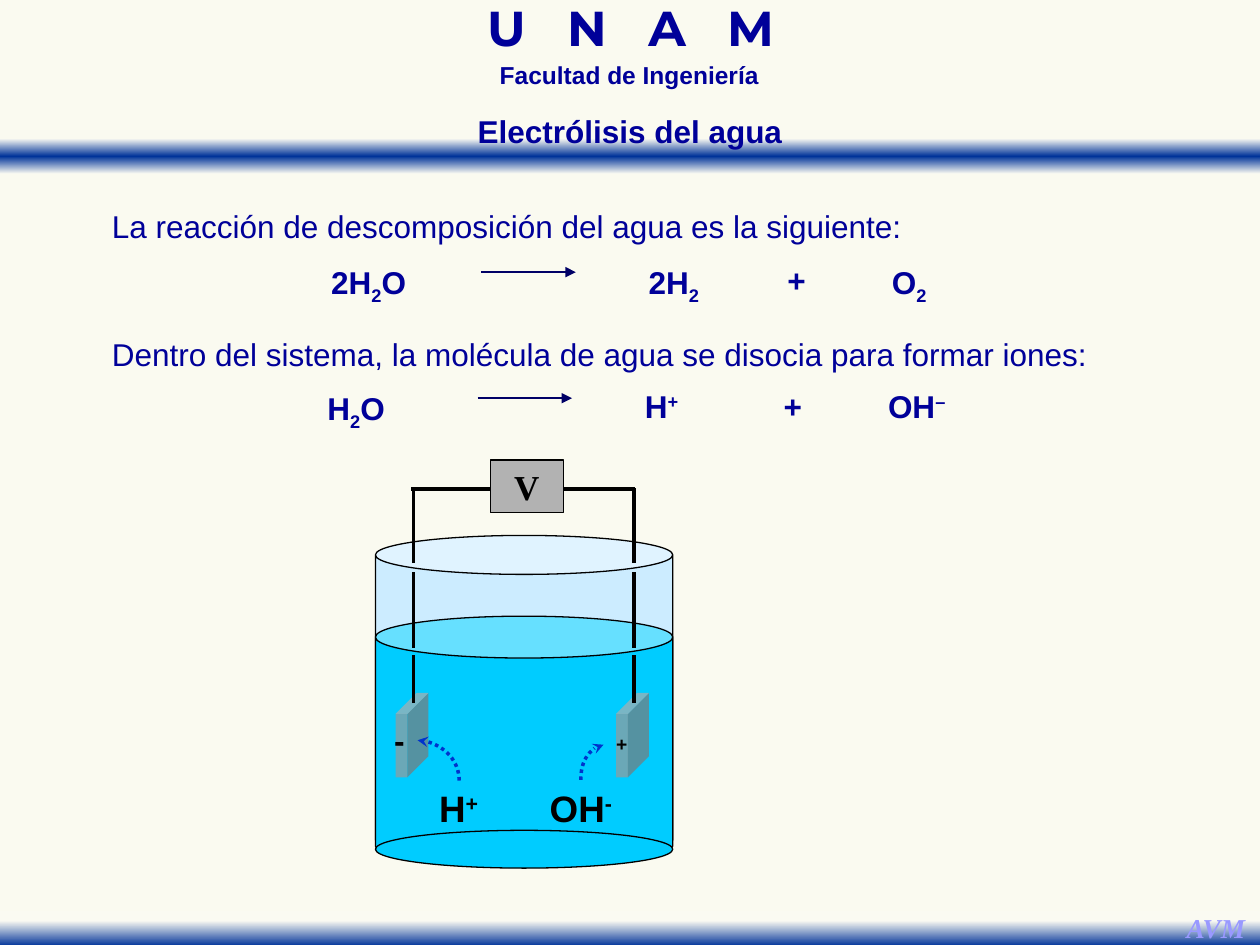
from copy import deepcopy
from dataclasses import dataclass

from lxml.etree import SubElement
from pptx import Presentation
from pptx.dml.color import RGBColor
from pptx.enum.dml import MSO_LINE
from pptx.enum.shapes import MSO_CONNECTOR, MSO_SHAPE
from pptx.enum.text import MSO_ANCHOR, MSO_AUTO_SIZE, PP_ALIGN
from pptx.oxml.ns import qn
from pptx.util import Inches, Pt


@dataclass(frozen=True)
class Theme:
    paper: RGBColor = RGBColor.from_string("FAFAF0")
    fade: RGBColor = RGBColor.from_string("FAFAF2")
    band: RGBColor = RGBColor.from_string("003399")
    navy: RGBColor = RGBColor.from_string("000099")
    reaction: RGBColor = RGBColor.from_string("000066")
    ion_path: RGBColor = RGBColor.from_string("0033CC")
    signature: RGBColor = RGBColor.from_string("9999FF")
    glass: RGBColor = RGBColor.from_string("CCECFF")
    water: RGBColor = RGBColor.from_string("00CCFF")
    metal: RGBColor = RGBColor.from_string("B2B2B2")
    plate: RGBColor = RGBColor.from_string("999999")
    black: RGBColor = RGBColor.from_string("000000")
    sans: str = "Arial"
    display: str = "Montserrat"
    serif: str = "Times New Roman"
    logo_size: float = 28
    faculty_size: float = 14
    signature_size: float = 15.6
    body_size: float = 18
    ion_size: float = 21
    source_size: float = 20
    sign_size: float = 11
    thin: float = 0.75
    wire: float = 2


theme = Theme()
deck = Presentation()
deck.slide_width, deck.slide_height = Inches(10), Inches(7.5)
page = deck.slides.add_slide(deck.slide_layouts[6])
page.background.fill.solid()
page.background.fill.fore_color.rgb = theme.paper


def add_text(place, runs, size=theme.body_size, color=theme.navy, font=theme.sans,
             align=PP_ALIGN.CENTER, spacing=None, wrap=False, bold=True, italic=False):
    box = page.shapes.add_textbox(*map(Inches, place))
    box.text_frame.word_wrap = wrap
    box.text_frame.auto_size = MSO_AUTO_SIZE.SHAPE_TO_FIT_TEXT
    para = box.text_frame.paragraphs[0]
    para.alignment = align
    if spacing:
        para.line_spacing = spacing
    for text, baseline in runs:
        span = para.add_run()
        span.text = text
        span.font.name, span.font.size = font, Pt(size)
        span.font.bold, span.font.italic = bold, italic
        span.font.color.rgb = color
        if baseline:
            span.font._element.set("baseline", str(baseline * 1000))
    return box


def add_line(kind, start, end, color, width, head=None):
    line = page.shapes.add_connector(kind, *map(Inches, (*start, *end)))
    line.line.color.rgb = color
    line.line.width = Pt(width)
    if head:
        SubElement(line.line._get_or_add_ln(), qn("a:tailEnd"), type=head)
    SubElement(line._element.spPr, qn("a:effectLst"))
    return line


for top, first_stop in ((1.1, 0), (7.23, 0.28)):
    band = page.shapes.add_shape(MSO_SHAPE.RECTANGLE, 0, Inches(top), Inches(10), Inches(0.28))
    band.shadow.inherit = False
    band.line.fill.background()
    band.fill.gradient()
    band.fill.gradient_angle = 270
    first, last = band.fill.gradient_stops
    first.position, last.position = first_stop, 1
    first.color.rgb, last.color.rgb = theme.fade, theme.band
    if first_stop == 0:
        last.position = 0.5
        stops = band._element.spPr.find(".//" + qn("a:gsLst"))
        closing = deepcopy(stops[0])
        closing.set("pos", "100000")
        stops.append(closing)

add_text((3.05, 0.06, 3.91, 0.43), [("U\u00a0\u00a0 N\u00a0\u00a0 A\u00a0\u00a0 M".replace("\u00a0", " "), 0)],
         theme.logo_size, font=theme.display, spacing=0.7, wrap=True)
add_text((3.21, 0.49, 3.57, 0.27), [("Facultad de Ingeniería", 0)],
         theme.faculty_size, spacing=0.7, wrap=True)
add_text((9.31, 7.18, 0.68, 0.37), [("AVM", 0)], theme.signature_size,
         theme.signature, theme.serif, italic=True)

for top, sentence in (
    (1.47, "La reacción de descomposición del agua es la siguiente:"),
    (2.49, "Dentro del sistema, la molécula de agua se disocia para formar iones:"),
):
    add_text((0.79, top, 8.43, 0.48), [(sentence, 0)], align=PP_ALIGN.JUSTIFY,
             spacing=1.4, wrap=True, bold=False)

equations = (
    (2.53, 1.9, (
        (0, 0.81, [("2H", 0), ("2", -25), ("O", 0)]),
        (2.52, 0.62, [("2H", 0), ("2", -25)]),
        (3.62, 0.35, [("+", 0)]),
        (4.45, 0.49, [("O", 0), ("2", -25)]),
    )),
    (2.5, 2.9, (
        (0, 0.67, [("H", 0), ("2", -25), ("O", 0)]),
        (2.52, 0.48, [("H", 0), ("+", 30)]),
        (3.62, 0.35, [("+", 0)]),
        (4.45, 0.67, [("OH", 0), ("–", 30)]),
    )),
)
for left, top, terms in equations:
    for offset, width, runs in terms:
        add_text((left + offset, top, width, 0.48), runs, align=PP_ALIGN.JUSTIFY, spacing=1.4)
    add_line(MSO_CONNECTOR.STRAIGHT, (left + 1.29, top + 0.26), (left + 2.04, top + 0.26),
             theme.reaction, theme.thin, "triangle")

for kind, top, height, color, lid in (
    (MSO_SHAPE.CAN, 4.25, 2.57, theme.glass, 0.131),
    (MSO_SHAPE.CAN, 4.89, 1.99, theme.water, 0.167),
    (MSO_SHAPE.OVAL, 6.59, 0.3, theme.water, None),
):
    vessel = page.shapes.add_shape(kind, *map(Inches, (2.98, top, 2.36, height)))
    vessel.shadow.inherit = False
    vessel.fill.solid()
    vessel.fill.fore_color.rgb = color
    vessel.line.color.rgb = theme.black
    vessel.line.width = Pt(theme.thin)
    if lid:
        vessel.adjustments[0] = lid

for left, width, runs in (
    (3.38, 0.52, [("H", 0), ("+", 30)]),
    (4.26, 0.7, [("OH", 0), ("-", 30)]),
):
    add_text((left, 6.19, width, 0.45), runs, theme.ion_size, theme.black)

for wire_x in (3.28, 5.03):
    plate = page.shapes.add_shape(MSO_SHAPE.CUBE, *map(Inches, (wire_x - 0.14, 5.5, 0.26, 0.67)))
    plate.shadow.inherit = False
    plate.adjustments[0] = 0.64
    plate.line.fill.background()
    plate.fill.solid()
    plate.fill.fore_color.rgb = theme.plate
    SubElement(plate._element.spPr.find(".//" + qn("a:srgbClr")), qn("a:alpha"), val="70000")
    for bottom, top in ((5.58, 5.2), (5.14, 4.54), (4.47, 3.87)):
        add_line(MSO_CONNECTOR.STRAIGHT, (wire_x, bottom), (wire_x, top), theme.black, theme.wire)
add_line(MSO_CONNECTOR.STRAIGHT, (5.04, 3.88), (3.26, 3.88), theme.black, theme.wire)

source = page.shapes.add_shape(MSO_SHAPE.RECTANGLE, *map(Inches, (3.89, 3.65, 0.58, 0.42)))
source.shadow.inherit = False
source.fill.solid()
source.fill.fore_color.rgb = theme.metal
source.line.color.rgb = theme.black
source.line.width = Pt(theme.thin)
source.text_frame.word_wrap = False
source.text_frame.vertical_anchor = MSO_ANCHOR.MIDDLE
para = source.text_frame.paragraphs[0]
para.alignment = PP_ALIGN.CENTER
span = para.add_run()
span.text = "V"
span.font.name, span.font.size, span.font.bold = theme.serif, Pt(theme.source_size), True
span.font.color.rgb = theme.black

add_text((4.79, 5.76, 0.29, 0.28), [("+", 0)], theme.sign_size, theme.black)
cathode_sign = add_text((3.03, 5.67, 0.28, 0.4), [("-", 0)], color=theme.black)
cathode_sign.rotation = 0.4

for start, end, degrees in (
    ((3.64, 5.87), (3.32, 6.2), 90),
    ((4.56, 5.96), (4.84, 6.14), 270),
):
    ion_path = add_line(MSO_CONNECTOR.CURVE, start, end, theme.ion_path, theme.wire, "stealth")
    ion_path.line.dash_style = MSO_LINE.ROUND_DOT
    properties = ion_path._element.spPr
    properties.find(qn("a:prstGeom")).set("prst", "curvedConnector2")
    properties.find(qn("a:xfrm")).set("rot", str(degrees * 60000))

add_text((3.68, 0.84, 2.64, 0.4), [("Electrólisis del agua", 0)])

deck.save("out.pptx")
